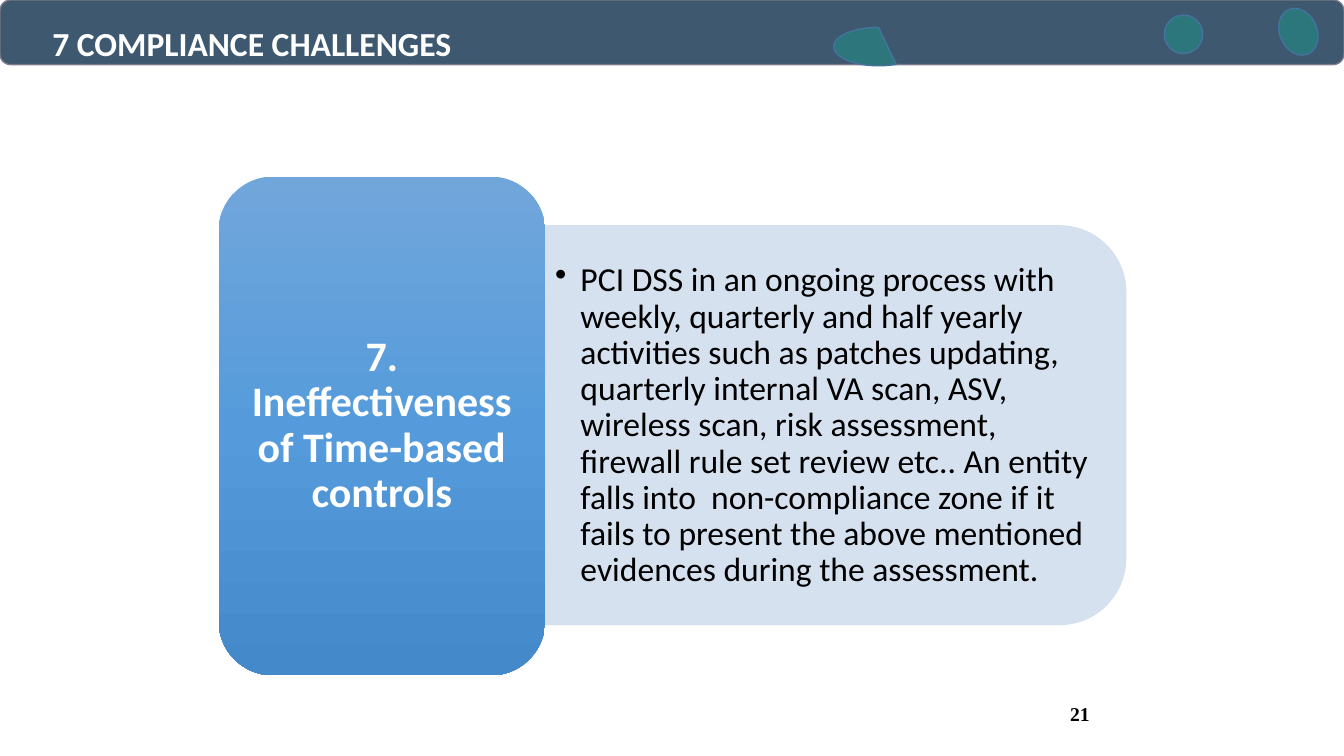
from copy import deepcopy

from lxml.etree import SubElement
from pptx import Presentation
from pptx.dml.color import RGBColor
from pptx.enum.shapes import MSO_SHAPE
from pptx.enum.text import MSO_ANCHOR, PP_ALIGN
from pptx.oxml.ns import qn
from pptx.util import Cm, Pt

HUES = {
    "bar": "3E5870", "rim": "7A7989", "dot": "1C9687", "chord": "2D777C",
    "edge": "43739E", "panel": "D2DEEF", "white": "FFFFFF", "black": "000000",
    "top": "71A6DB", "mid": "559BDB", "low": "448ACA",
}


def paint(fill, hue, alpha=100):
    fill.solid()
    fill.fore_color.rgb = RGBColor.from_string(HUES[hue])
    if alpha < 100:
        tint = fill._xPr.find(".//" + qn("a:srgbClr"))
        SubElement(tint, qn("a:alpha"), val=str(alpha * 1000))


def write(frame, text, size, hue, bold=True, face="Calibri"):
    frame.word_wrap = True
    para = frame.paragraphs[0]
    para.text = text
    para.font.name, para.font.size, para.font.bold = face, Pt(size), bold
    para.font.color.rgb = RGBColor.from_string(HUES[hue])
    return para


deck = Presentation()
deck.slide_width, deck.slide_height = Cm(33.87), Cm(19.05)
shapes = deck.slides.add_slide(deck.slide_layouts[6]).shapes

# Header bar, its ornaments and the panel:
# kind, box, turn, fill, fill alpha, line, line width, line alpha
parts = [
    (MSO_SHAPE.ROUNDED_RECTANGLE, (0, 0, 33.87, 1.63), 0, "bar", 100, "rim", 1, 94),
    (MSO_SHAPE.OVAL, (29.34, 0.38, 0.97, 0.97), 0, "dot", 50, "edge", 1, 100),
    (MSO_SHAPE.OVAL, (32.11, 0.33, 1.22, 0.94), 246, "dot", 50, "edge", 1, 100),
    (MSO_SHAPE.CHORD, (21.01, 0.69, 2.26, 0.97), 0, "chord", 100, "edge", 1, 100),
    (MSO_SHAPE.ROUND_2_SAME_RECTANGLE, (16.03, 3.4, 10.06, 14.63), 90,
     "panel", 90, "panel", 0.5, 90),
]
for kind, box, turn, hue, alpha, edge, width, fade in parts:
    part = shapes.add_shape(kind, *map(Cm, box))
    part.rotation = turn
    part.shadow.inherit = False
    paint(part.fill, hue, alpha)
    paint(part.line.fill, edge, fade)
    part.line.width = Pt(width)

# Panel text with its bullet
note = shapes.add_textbox(Cm(13.74), Cm(6.2), Cm(14.15), Cm(9.07)).text_frame
note.vertical_anchor = MSO_ANCHOR.MIDDLE
props = note.paragraphs[0]._p.get_or_add_pPr()
props.set("marL", str(Cm(0.64)))
props.set("indent", str(Cm(-0.64)))
SubElement(props, qn("a:buChar"), char="•")
para = write(
    note,
    "PCI DSS in an ongoing process with weekly, quarterly and half yearly "
    "activities such as patches updating, quarterly internal VA scan, ASV, "
    "wireless scan, risk assessment, firewall rule set review etc.. An entity  "
    "falls into  non-compliance zone if it fails to present the above mentioned "
    "evidences during the assessment.",
    24, "black", bold=False)
para.level = 1
para.line_spacing = 0.9

# Gradient card
card = shapes.add_shape(MSO_SHAPE.ROUNDED_RECTANGLE,
                        Cm(5.51), Cm(4.45), Cm(8.23), Cm(12.57))
card.shadow.inherit = False
card.line.fill.background()
card.fill.gradient()
card.fill.gradient_angle = 270
first = card.fill.gradient_stops[0]._gs
first.addnext(deepcopy(first))
for stop, hue, place in zip(card.fill.gradient_stops, ("top", "mid", "low"), (0, 0.5, 1)):
    stop.color.rgb = RGBColor.from_string(HUES[hue])
    stop.position = place
frame = card.text_frame
frame.vertical_anchor = MSO_ANCHOR.MIDDLE
frame.margin_left = frame.margin_right = Cm(0.3)
frame.margin_top = frame.margin_bottom = Cm(0.15)
para = write(frame, "7. Ineffectiveness of Time-based controls", 30, "white")
para.alignment = PP_ALIGN.CENTER
para.line_spacing = 0.9

# Title and page number
title = shapes.add_textbox(Cm(1.07), Cm(0.46), Cm(12.98), Cm(1.27))
write(title.text_frame, "7 COMPLIANCE CHALLENGES", 24, "white")
page = shapes.add_textbox(Cm(22.43), Cm(17.35), Cm(5.28), Cm(1.27)).text_frame
page.vertical_anchor = MSO_ANCHOR.MIDDLE
write(page, "21", 14, "black", face="Times New Roman").alignment = PP_ALIGN.RIGHT

deck.save("out.pptx")
